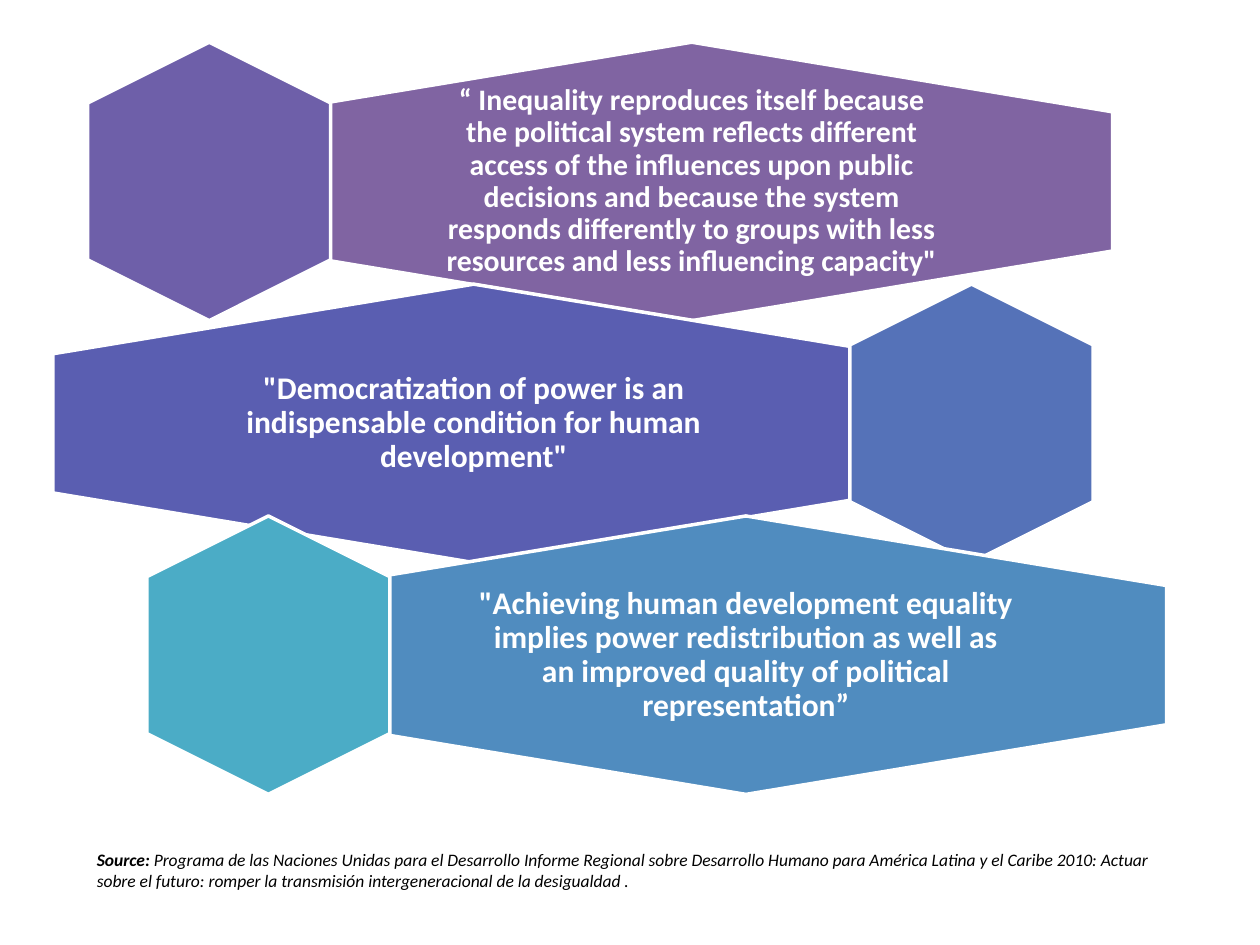
import dataclasses

import pptx
import pptx.dml.color
import pptx.enum.shapes
import pptx.enum.text
import pptx.util

Inches = pptx.util.Inches
Pt = pptx.util.Pt


@dataclasses.dataclass(frozen=True)
class Theme:
    font: str = "Calibri"
    light: str = "FFFFFF"
    dark: str = "000000"
    quote_size: int = 18
    long_quote_size: int = 17
    source_size: int = 10
    outline: int = 2


THEME = Theme()


@dataclasses.dataclass(frozen=True)
class QuoteRow:
    quote: str
    center_y: float
    wide_x: float
    wide_color: str
    small_x: float
    small_color: str
    size: int = THEME.quote_size
    side_margin: float = 0.07


HEX_HEIGHT = 2.21
WIDE_WIDTH = 6.68
SMALL_WIDTH = 1.93
QUOTE_WIDTH = 4.45
QUOTE_HEIGHT = 1.48
QUOTE_MARGIN = 0.07

ROWS = [
    QuoteRow(
        "“ Inequality reproduces itself because the political system reflects "
        "different access of the influences upon public decisions and because "
        "the system responds differently to groups with less resources and "
        'less influencing capacity"',
        1.44, 5.49, "8064A2", 1.66, "6E5FA9",
        size=THEME.long_quote_size, side_margin=0.24,
    ),
    QuoteRow(
        '"Democratization of power is an indispensable condition for human '
        'development"',
        3.36, 3.76, "5A5EB1", 7.71, "5572B8",
    ),
    QuoteRow(
        '"Achieving human development equality implies power redistribution '
        "as well as an improved quality of political representation”",
        5.2, 5.92, "508CBF", 2.13, "4BACC6",
    ),
]

SOURCE_LABEL = "Source: "
SOURCE_TEXT = (
    "Programa de las Naciones Unidas para el Desarrollo Informe Regional sobre "
    "Desarrollo Humano para América Latina y el Caribe 2010: Actuar sobre el "
    "futuro: romper la transmisión intergeneracional de la desigualdad ."
)


def rgb(color: str) -> pptx.dml.color.RGBColor:
    return pptx.dml.color.RGBColor.from_string(color)


def add_run(p, text: str, size: int, color: str, bold: bool, italic: bool = False) -> None:
    r = p.add_run()
    r.text = text
    r.font.name = THEME.font
    r.font.size = Pt(size)
    r.font.bold = bold
    r.font.italic = italic
    r.font.color.rgb = rgb(color)


def add_hexagon(s, center_x: float, center_y: float, width: float, color: str) -> None:
    sp = s.shapes.add_shape(
        pptx.enum.shapes.MSO_SHAPE.HEXAGON,
        Inches(center_x - HEX_HEIGHT / 2), Inches(center_y - width / 2),
        Inches(HEX_HEIGHT), Inches(width),
    )
    sp.rotation = 90
    sp.shadow.inherit = False
    sp.fill.solid()
    sp.fill.fore_color.rgb = rgb(color)
    sp.line.color.rgb = rgb(THEME.light)
    sp.line.width = Pt(THEME.outline)


def add_quote(s, row: QuoteRow) -> None:
    sp = s.shapes.add_textbox(
        Inches(row.wide_x - QUOTE_WIDTH / 2), Inches(row.center_y - QUOTE_HEIGHT / 2),
        Inches(QUOTE_WIDTH), Inches(QUOTE_HEIGHT),
    )
    tf = sp.text_frame
    tf.word_wrap = True
    tf.vertical_anchor = pptx.enum.text.MSO_ANCHOR.MIDDLE
    tf.margin_top = tf.margin_bottom = Inches(QUOTE_MARGIN)
    tf.margin_left = tf.margin_right = Inches(row.side_margin)
    p = tf.paragraphs[0]
    p.alignment = pptx.enum.text.PP_ALIGN.CENTER
    p.line_spacing = 0.9
    add_run(p, row.quote, row.size, THEME.light, bold=True)


def add_row(s, row: QuoteRow) -> None:
    add_hexagon(s, row.wide_x, row.center_y, WIDE_WIDTH, row.wide_color)
    add_quote(s, row)
    add_hexagon(s, row.small_x, row.center_y, SMALL_WIDTH, row.small_color)


def add_source(s) -> None:
    sp = s.shapes.add_textbox(Inches(0.67), Inches(6.69), Inches(8.74), Inches(0.44))
    tf = sp.text_frame
    tf.word_wrap = True
    tf.auto_size = pptx.enum.text.MSO_AUTO_SIZE.SHAPE_TO_FIT_TEXT
    p = tf.paragraphs[0]
    for text, bold in ((SOURCE_LABEL, True), (SOURCE_TEXT, False)):
        add_run(p, text, THEME.source_size, THEME.dark, bold, italic=True)


def main() -> None:
    prs = pptx.Presentation()
    prs.slide_width = Inches(10)
    prs.slide_height = Inches(7.5)
    s = prs.slides.add_slide(prs.slide_layouts[6])
    add_source(s)
    for row in ROWS:
        add_row(s, row)
    prs.save("out.pptx")


if __name__ == "__main__":
    main()
